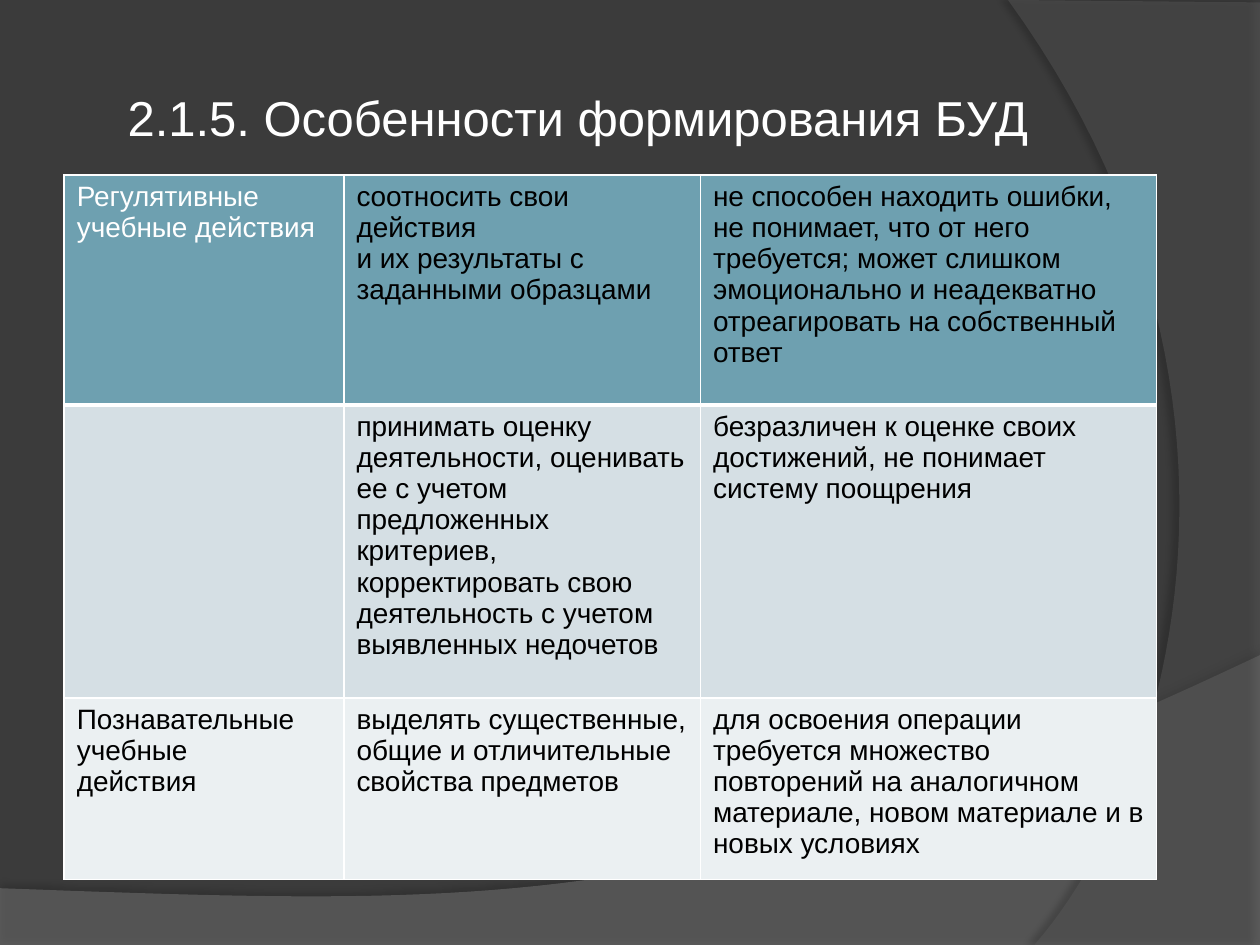
from lxml.etree import SubElement
from pptx import Presentation
from pptx.dml.color import RGBColor
from pptx.enum.text import MSO_ANCHOR, PP_ALIGN
from pptx.oxml.ns import qn
from pptx.util import Pt

FONT = "Arial"
HEX = {
    "back": "3B3B3B", "wave": "7F7F7F", "arc": "5E5E5E",
    "white": "FFFFFF", "black": "000000",
    "head": "6EA0B0", "band": "D5DFE4", "pale": "EBF0F2",
}
COLS = [159.84, 203.76, 260.64]
ROWS = [131.4, 167.4, 103.7]
FILLS = ["head", "band", "pale"]
CELLS = [
    ["Регулятивные учебные действия",
     "соотносить свои действия\nи их результаты с\nзаданными образцами",
     "не способен находить ошибки, не понимает, что от него требуется; "
     "может слишком эмоционально и неадекватно отреагировать на собственный ответ"],
    ["",
     "принимать оценку деятельности, оценивать ее с учетом предложенных критериев, "
     "корректировать свою деятельность с учетом выявленных недочетов",
     "безразличен к оценке своих достижений, не понимает систему поощрения"],
    ["Познавательные учебные\nдействия",
     "выделять существенные, общие и отличительные свойства предметов",
     "для освоения операции требуется множество повторений на аналогичном "
     "материале, новом материале и в новых условиях"],
]


def rgb(name):
    return RGBColor.from_string(HEX[name])


def curve(a, b, c, d, steps=48):
    """Points of a cubic Bezier curve from a to d."""
    spots = []
    for i in range(steps + 1):
        t = i / steps
        parts = ((1 - t) ** 3, 3 * t * (1 - t) ** 2, 3 * t * t * (1 - t), t ** 3)
        spots.append(tuple(sum(k * p[n] for k, p in zip(parts, (a, b, c, d)))
                           for n in (0, 1)))
    return spots


def add_alpha(color, percent):
    SubElement(color, qn("a:alpha"), val=str(percent * 1000))


def add_swoosh(slide, box, spots, color, alpha, shade, dist, angle):
    """Translucent outline with a soft shadow; spots are relative to box."""
    left, top = box
    spots = [(Pt(left + x), Pt(top + y)) for x, y in spots]
    pen = slide.shapes.build_freeform(*spots[0], scale=1.0)
    pen.add_line_segments(spots[1:], close=True)
    shape = pen.convert_to_shape()
    shape.shadow.inherit = False
    shape.line.fill.background()
    shape.fill.solid()
    shape.fill.fore_color.rgb = rgb(color)
    props = shape.element.spPr
    add_alpha(props.find(f"{qn('a:solidFill')}/{qn('a:srgbClr')}"), alpha)
    cast = SubElement(props.find(qn("a:effectLst")), qn("a:outerShdw"),
                      blurRad=str(Pt(4)), dist=str(Pt(dist)),
                      dir=str(angle * 60000), algn="ctr", rotWithShape="0")
    add_alpha(SubElement(cast, qn("a:srgbClr"), val=HEX["black"]), shade)


def add_scene(slide):
    slide.background.fill.solid()
    slide.background.fill.fore_color.rgb = rgb("back")
    wave = curve((720, 0), (402.5, 150.5), (281.5, 143.3), (0, 133.2))
    add_swoosh(slide, (0, 374.4), wave + [(0, 166), (720, 166)],
               "wave", 45, 35, 3.5, 270)
    arc = curve((15.1, 540), (97.2, 445.7), (157, 216), (0, 0))
    add_swoosh(slide, (576, 0), arc + [(144, 1.4), (144, 540)],
               "arc", 40, 45, 4, 180)


def style(para, size, color):
    para.font.name = FONT
    para.font.size = Pt(size)
    para.font.bold = False
    para.font.color.rgb = rgb(color)


def set_title(slide, box, text):
    title = slide.shapes.title
    title.left, title.top, title.width, title.height = map(Pt, box)
    frame = title.text_frame
    frame.text = text
    frame.word_wrap = True
    frame.vertical_anchor = MSO_ANCHOR.MIDDLE
    frame.margin_left = frame.margin_right = Pt(3.6)
    frame.margin_top = frame.margin_bottom = Pt(3.6)
    para = frame.paragraphs[0]
    para.alignment = PP_ALIGN.CENTER
    style(para, 28, "white")
    title.element.getparent().append(title.element)  # in front of the scene


def set_edges(cell, widths):
    props = cell._tc.get_or_add_tcPr()
    for i, (side, width) in enumerate(widths.items()):
        line = props.makeelement(qn(f"a:ln{side}"), {"w": str(Pt(width))})
        fill = SubElement(line, qn("a:solidFill"))
        SubElement(fill, qn("a:srgbClr"), val=HEX["white"])
        props.insert(i, line)


def add_grid(slide, box):
    left, top = box
    frame = slide.shapes.add_table(len(ROWS), len(COLS), Pt(left), Pt(top),
                                   Pt(sum(COLS)), Pt(sum(ROWS)))
    table = frame.table
    for col, width in zip(table.columns, COLS):
        col.width = Pt(width)
    for r, (height, fill) in enumerate(zip(ROWS, FILLS)):
        table.rows[r].height = Pt(height)
        for c, text in enumerate(CELLS[r]):
            cell = table.cell(r, c)
            cell.text = text
            cell.fill.solid()
            cell.fill.fore_color.rgb = rgb(fill)
            for para in cell.text_frame.paragraphs:
                style(para, 16, "white" if r == c == 0 else "black")
            set_edges(cell, {"L": 1, "R": 1, "T": 3 if r == 1 else 1,
                             "B": 3 if r == 0 else 1})


def main():
    deck = Presentation()
    deck.slide_width, deck.slide_height = Pt(720), Pt(540)
    slide = deck.slides.add_slide(deck.slide_layouts[5])
    add_scene(slide)
    set_title(slide, (36, 21.6, 588.24, 90), "2.1.5. Особенности формирования БУД")
    add_grid(slide, (36.72, 100.08))
    deck.save("out.pptx")


if __name__ == "__main__":
    main()
